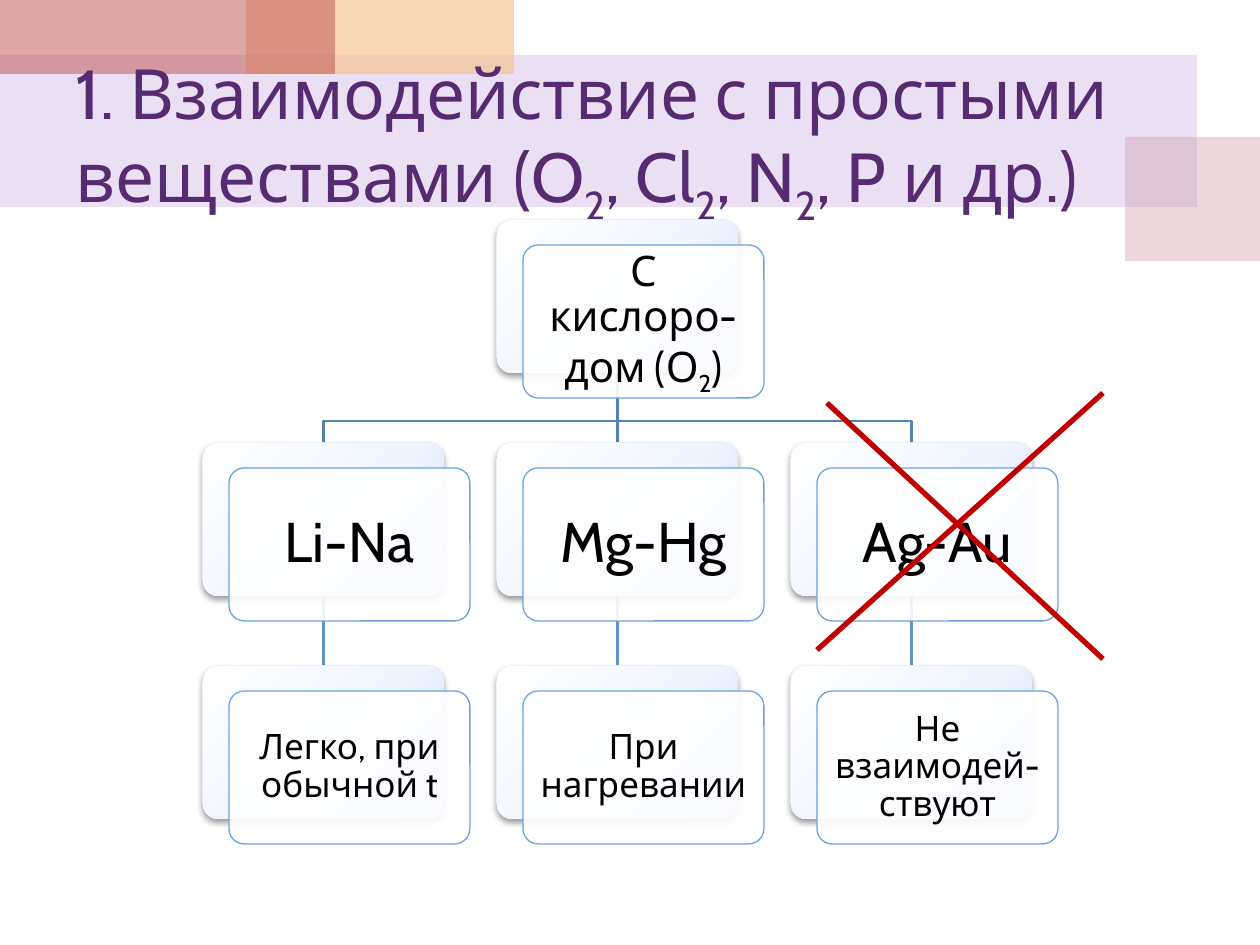
import pptx
import pptx.util
import pptx.oxml
from pptx.dml.color import RGBColor
from pptx.enum.shapes import MSO_CONNECTOR, MSO_SHAPE
from pptx.enum.text import MSO_ANCHOR, MSO_AUTO_SIZE, PP_ALIGN
from pptx.oxml.ns import nsdecls, qn

# Content: underscores enclose subscripts
TITLE = "1. Взаимодействие с простыми веществами (O_2_, Cl_2_, N_2_, P и др.)"
# text, column, row
NODES = [
    ("С кислоро-дом (О_2_)", 1, 0),
    ("Li-Na", 0, 1),
    ("Легко, при обычной t", 0, 2),
    ("Mg-Hg", 1, 1),
    ("При нагревании", 1, 2),
    ("Ag-Au", 2, 1),
    ("Не взаимодей-ствуют", 2, 2),
]
ROW_STYLES = [(24, 12), (32, 16), (20, 10)]  # text size in pt, inset in px

# Colours
PURPLE = RGBColor(0x56, 0x2B, 0x71)
BLACK = RGBColor(0, 0, 0)
WHITE = RGBColor(0xFF, 0xFF, 0xFF)
CARD_LINE = RGBColor(0x6B, 0xA2, 0xDF)
UPPER_LINK = RGBColor(0x56, 0x82, 0xB3)
LOWER_LINK = RGBColor(0x61, 0x93, 0xCA)
CROSS_RED = RGBColor(0xC0, 0, 0)
# box in px, colour, opacity in percent
BANDS = [
    ((0, 55, 1197, 152), RGBColor(0xBF, 0x98, 0xD8), 30),
    ((1125, 137, 135, 124), RGBColor(0xCC, 0x9E, 0xAC), 40),
    ((246, 0, 268, 74), RGBColor(0xF5, 0xBC, 0x83), 60),
    ((0, 0, 335, 74), RGBColor(0xC0, 0x50, 0x4D), 50),
]
CROSS = [((827, 403), (1103, 659)), ((1103, 393), (817, 650))]

# Tree grid in px
LEFT, TOP, COLUMN_STEP, ROW_STEP = 203, 220, 294, 223
PLATE_WIDTH, PLATE_HEIGHT = 241, 153
CARD_SHIFT_X, CARD_SHIFT_Y = 26, 25
ELBOW_HEIGHT = 22
FONT = "Cabin"

PLATE_GRADIENT = f"""<a:gradFill {nsdecls('a')} rotWithShape="1"><a:gsLst>
<a:gs pos="0"><a:srgbClr val="FEFEFF"/></a:gs>
<a:gs pos="55000"><a:srgbClr val="F0F5FF"/></a:gs>
<a:gs pos="100000"><a:srgbClr val="C0D8FF"/></a:gs></a:gsLst>
<a:path path="circle"><a:fillToRect l="-40000" t="-90000" r="140000" b="190000"/></a:path>
</a:gradFill>"""
PLATE_SHADOW = f"""<a:effectLst {nsdecls('a')}>
<a:outerShdw blurRad="50800" dist="25400" dir="5400000" rotWithShape="0">
<a:srgbClr val="000000"><a:alpha val="40000"/></a:srgbClr></a:outerShdw></a:effectLst>"""
NO_EFFECTS = f"<a:effectLst {nsdecls('a')}/>"


def px(length):
    return pptx.util.Emu(round(length * 914400 / 126))


def add_block(slide, kind, box, colour, opacity):
    shape = slide.shapes.add_shape(kind, *map(px, box))
    shape.shadow.inherit = False
    shape.fill.solid()
    shape.fill.fore_color.rgb = colour
    colour_element = shape._element.spPr.find(qn("a:solidFill"))[0]
    colour_element.append(pptx.oxml.parse_xml(
        f'<a:alpha {nsdecls("a")} val="{opacity * 1000}"/>'))
    shape.line.fill.background()
    return shape


def write_text(frame, text, size, colour, alignment):
    frame.word_wrap = True
    frame.auto_size = MSO_AUTO_SIZE.NONE
    frame.vertical_anchor = MSO_ANCHOR.MIDDLE
    paragraph = frame.paragraphs[0]
    paragraph.alignment = alignment
    paragraph.line_spacing = 0.9
    for index, part in enumerate(text.split("_")):
        run = paragraph.add_run()
        run.text = part
        run.font.name = FONT
        run.font.size = pptx.util.Pt(size)
        run.font.color.rgb = colour
        if index % 2:
            run.font._element.set("baseline", "-25000")


def style_line(shape, colour, width):
    shape.line.color.rgb = colour
    shape.line.width = pptx.util.Pt(width)


def add_line(slide, start, end, colour, width):
    line = slide.shapes.add_connector(MSO_CONNECTOR.STRAIGHT, *map(px, start + end))
    line._element.spPr.append(pptx.oxml.parse_xml(NO_EFFECTS))
    style_line(line, colour, width)


def add_elbow(slide, points):
    corners = [tuple(map(px, point)) for point in points]
    builder = slide.shapes.build_freeform(*corners[0])
    builder.add_line_segments(corners[1:], close=False)
    elbow = builder.convert_to_shape()
    elbow.shadow.inherit = False
    elbow.fill.background()
    style_line(elbow, UPPER_LINK, 1.5)


def plate_corner(column, row):
    return LEFT + column * COLUMN_STEP, TOP + row * ROW_STEP


def add_links(slide):
    root_x = plate_corner(1, 0)[0] + PLATE_WIDTH / 2
    for column in (2, 1, 0):
        x, middle_top = plate_corner(column, 1)
        x += PLATE_WIDTH / 2
        bottom_top = middle_top + ROW_STEP
        add_line(slide, (x, middle_top + PLATE_HEIGHT), (x, bottom_top), LOWER_LINK, 1.5)
        start = (root_x, TOP + PLATE_HEIGHT)
        if x == root_x:
            add_line(slide, start, (x, middle_top), UPPER_LINK, 1.5)
        else:
            turn = middle_top - ELBOW_HEIGHT
            add_elbow(slide, [start, (root_x, turn), (x, turn), (x, middle_top)])


def add_node(slide, text, column, row):
    x, y = plate_corner(column, row)
    # Shaded plate behind
    plate = slide.shapes.add_shape(
        MSO_SHAPE.ROUNDED_RECTANGLE, *map(px, (x, y, PLATE_WIDTH, PLATE_HEIGHT)))
    plate.adjustments[0] = 0.1
    plate.line.fill.background()
    properties = plate._element.spPr
    properties.find(qn("a:prstGeom")).addnext(pptx.oxml.parse_xml(PLATE_GRADIENT))
    properties.append(pptx.oxml.parse_xml(PLATE_SHADOW))
    # Translucent card with the text
    box = (x + CARD_SHIFT_X, y + CARD_SHIFT_Y, PLATE_WIDTH, PLATE_HEIGHT)
    card = add_block(slide, MSO_SHAPE.ROUNDED_RECTANGLE, box, WHITE, 90)
    card.adjustments[0] = 0.1
    style_line(card, CARD_LINE, 0.75)
    size, inset = ROW_STYLES[row]
    frame = card.text_frame
    frame.margin_left = frame.margin_right = px(inset)
    frame.margin_top = frame.margin_bottom = px(inset)
    write_text(frame, text, size, BLACK, PP_ALIGN.CENTER)


def main():
    presentation = pptx.Presentation()
    presentation.slide_width, presentation.slide_height = px(1260), px(945)
    slide = presentation.slides.add_slide(presentation.slide_layouts[5])

    # Decorative bands, then the title above them
    for box, colour, opacity in BANDS:
        add_block(slide, MSO_SHAPE.RECTANGLE, box, colour, opacity)
    title = slide.shapes.title
    title.left, title.top, title.width, title.height = map(px, (63, 74, 1134, 132))
    write_text(title.text_frame, TITLE, 39.6, PURPLE, PP_ALIGN.LEFT)
    slide.shapes._spTree.append(title._element)

    # Tree and the cross over its last branch
    add_links(slide)
    for node in NODES:
        add_node(slide, *node)
    for start, end in CROSS:
        add_line(slide, start, end, CROSS_RED, 3)

    presentation.save("out.pptx")


if __name__ == "__main__":
    main()
